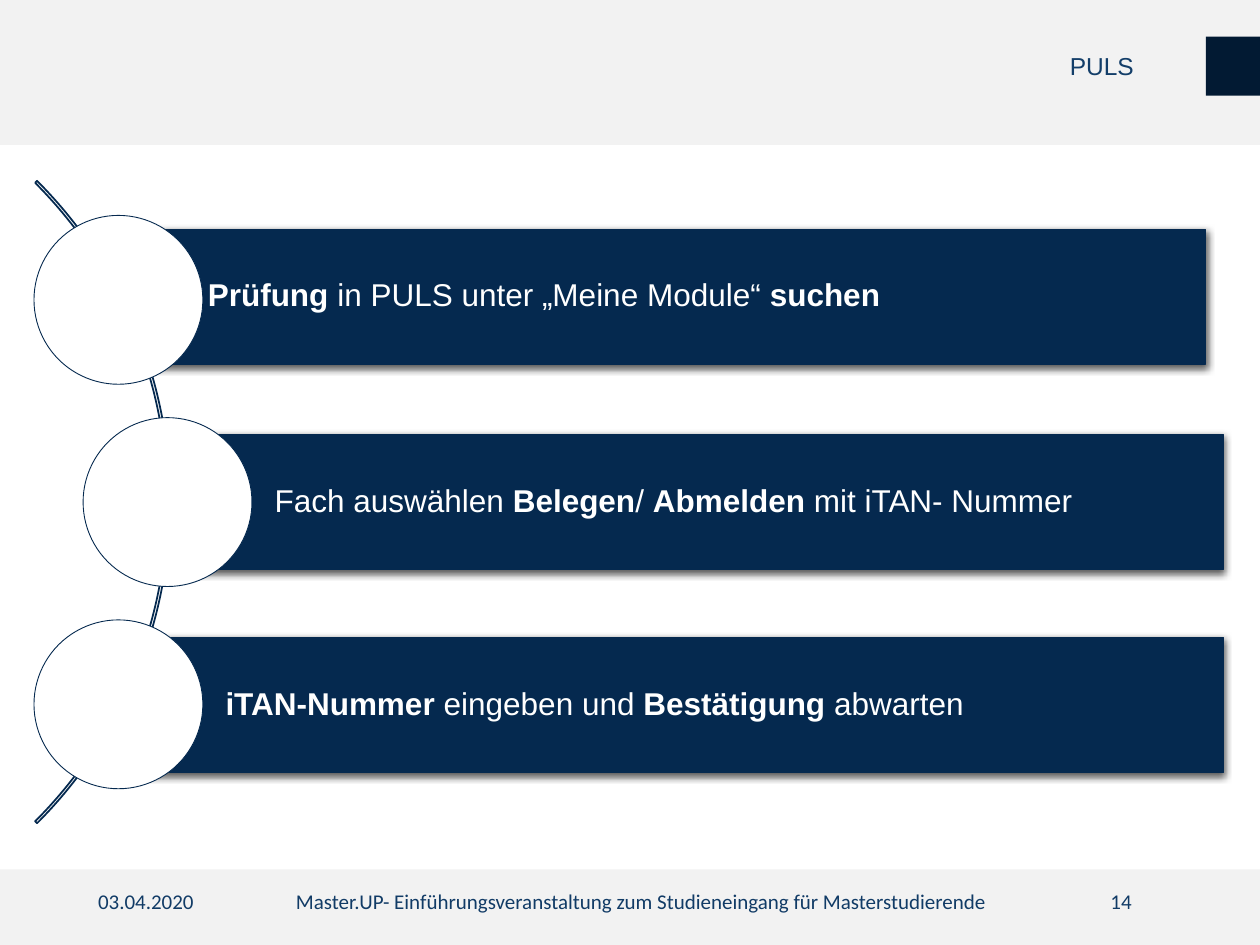
from lxml import etree
from pptx import Presentation
from pptx.dml.color import RGBColor
from pptx.enum import shapes, text
from pptx.oxml import ns
from pptx.util import Inches, Pt

COLOURS = {"band": "F2F2F2", "navy": "05294F", "white": "FFFFFF",
           "footer": "113B66", "title": "133E69", "marker": "021A33"}
WIDTH, HEIGHT = 10, 7.5
CIRCLE = 1.34
BAR_HEIGHT = 1.07
FIRST_CIRCLE_TOP, ROW_PITCH = 1.71, 1.605

# Each step: circle left, bar left, bar right, bar top, runs as (wording, bold)
STEPS = [
    (0.27, 0.8, 9.57, 1.82,
     [("Prüfung ", True), ("in PULS unter „Meine Module“ ", False),
      ("suchen", True)]),
    (0.66, 1.33, 9.71, 3.45,
     [("Fach auswählen", False), (" Belegen", True), ("/ ", False),
      ("Abmelden", True), (" mit iTAN- Nummer", False)]),
    (0.27, 0.94, 9.71, 5.06,
     [("iTAN-Nummer", True), (" eingeben und ", False),
      ("Bestätigung", True), (" abwarten", False)]),
]

FOOTERS = [
    ("03.04.2020", 0.68, 2.25, text.PP_ALIGN.LEFT),
    ("Master.UP- Einführungsveranstaltung zum Studieneingang für "
     "Masterstudierende", 2.25, 6.05, text.PP_ALIGN.LEFT),
    ("14", 6.83, 2.25, text.PP_ALIGN.RIGHT),
]


def colour(name):
    return RGBColor.from_string(COLOURS[name])


def style_font(font, name, size, colour_name, bold=False):
    font.name, font.size, font.bold = name, Pt(size), bold
    font.color.rgb = colour(colour_name)


def add_figure(slide, kind, left, top, width, height, fill=None, line=None):
    """Add a flat preset shape; line is a width in points."""
    figure = slide.shapes.add_shape(
        kind, Inches(left), Inches(top), Inches(width), Inches(height))
    figure.shadow.inherit = False
    if fill:
        figure.fill.solid()
        figure.fill.fore_color.rgb = colour(fill)
    else:
        figure.fill.background()
    if line:
        figure.line.color.rgb = colour("navy")
        figure.line.width = Pt(line)
    else:
        figure.line.fill.background()
    return figure


def add_soft_shadow(figure):
    effects = figure._element.spPr.find(ns.qn("a:effectLst"))
    shadow = etree.SubElement(
        effects, ns.qn("a:outerShdw"), blurRad=str(Pt(4.5)),
        dist=str(Pt(1.5)), dir="5400000", rotWithShape="0")
    black = etree.SubElement(shadow, ns.qn("a:srgbClr"), val="000000")
    etree.SubElement(black, ns.qn("a:alpha"), val="63000")


def add_step(slide, row, circle_left, left, right, top, runs):
    bar = add_figure(slide, shapes.MSO_SHAPE.RECTANGLE, left, top,
                     right - left, BAR_HEIGHT, "navy", 0.75)
    add_soft_shadow(bar)
    frame = bar.text_frame
    frame.word_wrap = True
    frame.vertical_anchor = text.MSO_ANCHOR.MIDDLE
    frame.margin_left = Inches(0.85)
    frame.margin_right = Inches(0.05)
    sentence = frame.paragraphs[0]
    sentence.alignment = text.PP_ALIGN.LEFT
    sentence.line_spacing = 0.9
    for wording, bold in runs:
        run = sentence.add_run()
        run.text = wording
        style_font(run.font, "Arial", 18, "white", bold)
    add_figure(slide, shapes.MSO_SHAPE.OVAL, circle_left,
               FIRST_CIRCLE_TOP + row * ROW_PITCH, CIRCLE, CIRCLE,
               "white", 0.5)


def add_arc(slide):
    arc = add_figure(slide, shapes.MSO_SHAPE.BLOCK_ARC,
                     -5.86, 0.38, 7.21, 7.21, line=1)
    for index, value in enumerate((189, 27, 0.003)):
        arc.adjustments[index] = value


def add_footer(slide, wording, left, width, alignment):
    box = slide.shapes.add_textbox(
        Inches(left), Inches(7), Inches(width), Inches(0.4))
    box.text_frame.word_wrap = True
    box.text_frame.text = wording
    line = box.text_frame.paragraphs[0]
    line.alignment = alignment
    style_font(line.runs[0].font, "Calibri", 12, "footer")


def set_title(slide, wording):
    title = slide.shapes.title
    title.left, title.top = Inches(8.39), Inches(0.17)
    title.width, title.height = Inches(1.37), Inches(0.74)
    title.text_frame.text = wording
    title.text_frame.vertical_anchor = text.MSO_ANCHOR.MIDDLE
    line = title.text_frame.paragraphs[0]
    line.alignment = text.PP_ALIGN.LEFT
    line.line_spacing = 0.9
    style_font(line.runs[0].font, "Arial", 14, "title")


def main():
    deck = Presentation()
    deck.slide_width, deck.slide_height = Inches(WIDTH), Inches(HEIGHT)
    slide = deck.slides.add_slide(deck.slide_layouts[5])
    for top, height in ((6.9, 0.6), (0, 1.15)):
        add_figure(slide, shapes.MSO_SHAPE.RECTANGLE, 0, top, WIDTH, height,
                   "band")
    # The title belongs in front of the header band
    slide.shapes._spTree.append(slide.shapes.title._element)
    set_title(slide, "PULS")
    for footer in FOOTERS:
        add_footer(slide, *footer)
    add_arc(slide)
    for row, step in enumerate(STEPS):
        add_step(slide, row, *step)
    add_figure(slide, shapes.MSO_SHAPE.RECTANGLE, 9.57, 0.29, 0.43, 0.47,
               "marker")
    deck.save("out.pptx")


if __name__ == "__main__":
    main()
